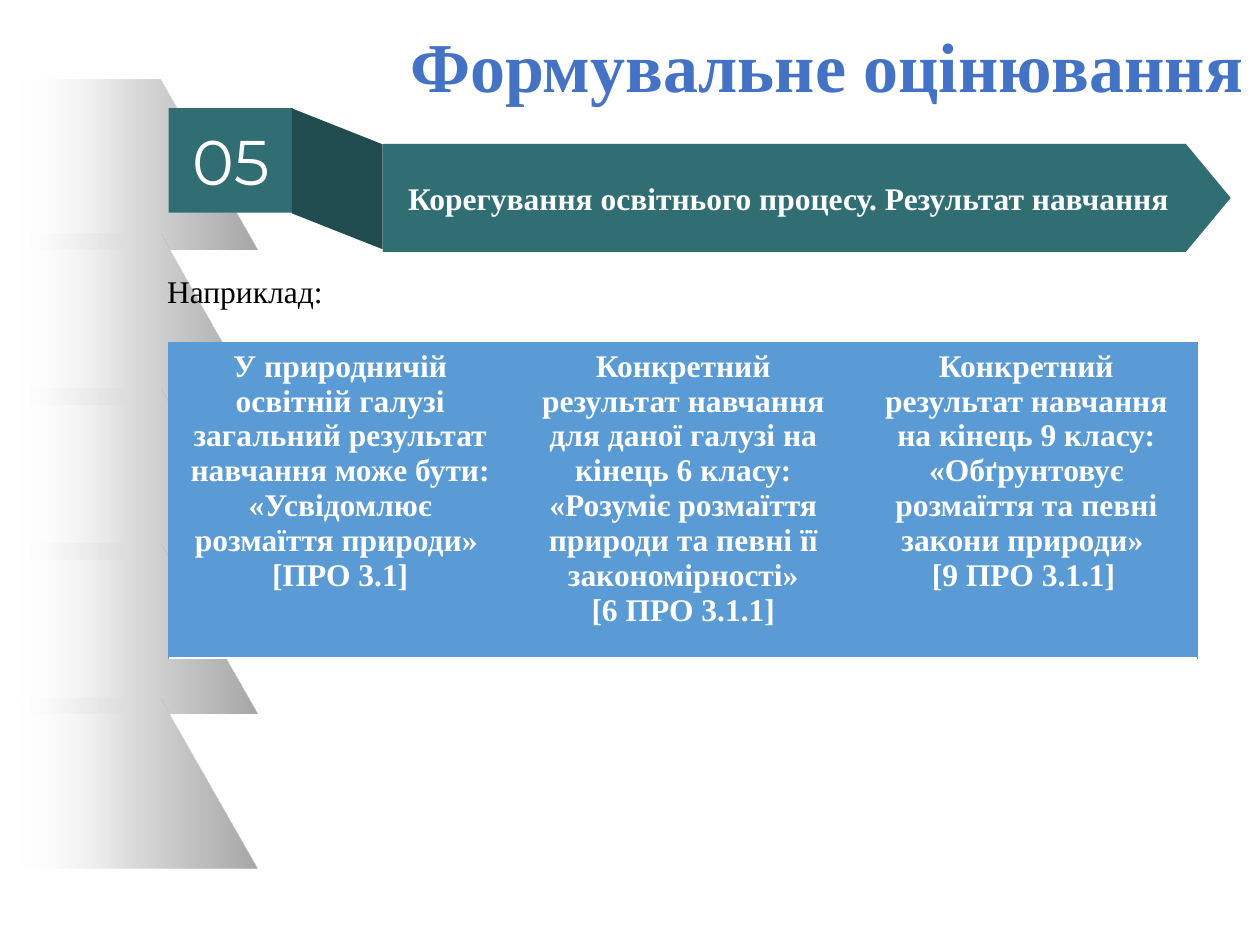
from lxml import etree
from pptx import Presentation
from pptx.dml.color import RGBColor
from pptx.enum import shapes, text
from pptx.oxml.ns import qn
from pptx.util import Cm, Pt

TEAL, DARK_TEAL, WHITE, BLUE = "316E73", "214C4F", "FFFFFF", "5B9BD5"
SERIF = "Times New Roman"


def color(hex_code):
    return RGBColor.from_string(hex_code)


def style(paragraph, size, hex_code, align, bold=False, face=SERIF):
    paragraph.alignment = align
    font = paragraph.font
    font.size, font.bold, font.name = Pt(size), bold, face
    font.color.rgb = color(hex_code)


prs = Presentation()
prs.slide_width, prs.slide_height = Cm(25.4), Cm(19.05)
slide = prs.slides.add_slide(prs.slide_layouts[5])
align = text.PP_ALIGN
middle = text.MSO_ANCHOR.MIDDLE

# Title
title = slide.shapes.title
title.left, title.top, title.width, title.height = Cm(2.46), Cm(0.3), Cm(22.86), Cm(2.01)
title.text_frame.text = "Формувальне оцінювання"
title.text_frame.auto_size = text.MSO_AUTO_SIZE.NONE
title.text_frame.vertical_anchor = middle
style(title.text_frame.paragraphs[0], 40, "4472C4", align.RIGHT, bold=True)

# Grey stripes fading out to the left
stops = [(0, "A6A6A6", 100), (50, "DDDDDD", 100), (93, WHITE, 0), (100, WHITE, 0)]
for row in range(5):
    top = 1.6 + 3.12 * row
    outline = slide.shapes.build_freeform(0, Cm(top))
    outline.add_line_segments(
        [(Cm(3.23), Cm(top)), (Cm(5.18), Cm(top + 3.43)), (0, Cm(top + 3.43))], close=True)
    stripe = outline.convert_to_shape()
    stripe.shadow.inherit = False
    stripe.line.fill.background()
    stripe.fill.gradient()
    stripe.fill.gradient_angle = 180
    stop_list = stripe._element.spPr.find(qn("a:gradFill")).find(qn("a:gsLst"))
    for old_stop in list(stop_list):
        stop_list.remove(old_stop)
    for position, hex_code, opacity in stops:
        stop = etree.SubElement(stop_list, qn("a:gs"), pos=str(position * 1000))
        shade = etree.SubElement(stop, qn("a:srgbClr"), val=hex_code)
        etree.SubElement(shade, qn("a:alpha"), val=str(opacity * 1000))

# Folded ribbon: banner, number and the fold between them
ribbon = [
    (shapes.MSO_SHAPE.PENTAGON, (7.72, 2.9, 17.09, 2.18), TEAL, 0.415),
    (shapes.MSO_SHAPE.RECTANGLE, (3.4, 2.18, 2.51, 2.11), TEAL, None),
    (shapes.MSO_SHAPE.PARALLELOGRAM, (5.38, 2.69, 2.84, 1.83), DARK_TEAL, 0.396),
]
parts = []
for kind, box, hex_code, adjustment in ribbon:
    part = slide.shapes.add_shape(kind, *map(Cm, box))
    part.shadow.inherit = False
    part.fill.solid()
    part.fill.fore_color.rgb = color(hex_code)
    part.line.fill.background()
    part.text_frame.vertical_anchor = middle
    if adjustment:
        part.adjustments[0] = adjustment
    parts.append(part)
banner, number, fold = parts
fold.rotation = 270
banner.text_frame.margin_left = banner.text_frame.margin_right = Cm(0.51)
banner.text_frame.text = "Корегування освітнього процесу. Результат навчання"
style(banner.text_frame.paragraphs[0], 18, WHITE, align.JUSTIFY, bold=True)
number.text_frame.text = "05"
style(number.text_frame.paragraphs[0], 36, WHITE, align.CENTER, face="Montserrat")

# Lead-in
example = slide.shapes.add_textbox(Cm(3.12), Cm(5.36), Cm(7.11), Cm(1.8)).text_frame
example.word_wrap = True
example.text = "Наприклад:"
style(example.paragraphs[0], 18, "000000", align.LEFT)

# Learning outcomes
outcomes = [
    "У природничій освітній галузі загальний результат навчання може бути: "
    "«Усвідомлює розмаїття природи» \n[ПРО 3.1]",
    "Конкретний результат навчання для даної галузі на кінець 6 класу: "
    "«Розуміє розмаїття природи та певні її закономірності»\n[6 ПРО 3.1.1]",
    "Конкретний результат навчання на кінець 9 класу: "
    "«Обґрунтовує розмаїття та певні закони природи» \n[9 ПРО 3.1.1]\t",
]
table = slide.shapes.add_table(1, 3, Cm(3.4), Cm(6.91), Cm(20.75), Cm(6.35)).table
no_grid = "{2D5ABB26-0587-4C30-8999-92F81FD0307C}"
table._tbl.tblPr.find(qn("a:tableStyleId")).text = no_grid
for column, outcome in enumerate(outcomes):
    cell = table.cell(0, column)
    cell.text = outcome
    for paragraph in cell.text_frame.paragraphs:
        style(paragraph, 18, WHITE, align.CENTER, bold=True)
    borders = [("a:lnT", BLUE, 0.5), ("a:lnB", WHITE, 1)]
    if column == 0:
        borders.insert(0, ("a:lnL", BLUE, 0.5))
    if column == 2:
        borders.insert(0, ("a:lnR", BLUE, 0.5))
    for side, hex_code, width in borders:
        border = etree.SubElement(cell._tc.get_or_add_tcPr(), qn(side), w=str(Pt(width)))
        paint = etree.SubElement(border, qn("a:solidFill"))
        etree.SubElement(paint, qn("a:srgbClr"), val=hex_code)
    cell.fill.solid()
    cell.fill.fore_color.rgb = color(BLUE)

prs.save("out.pptx")
